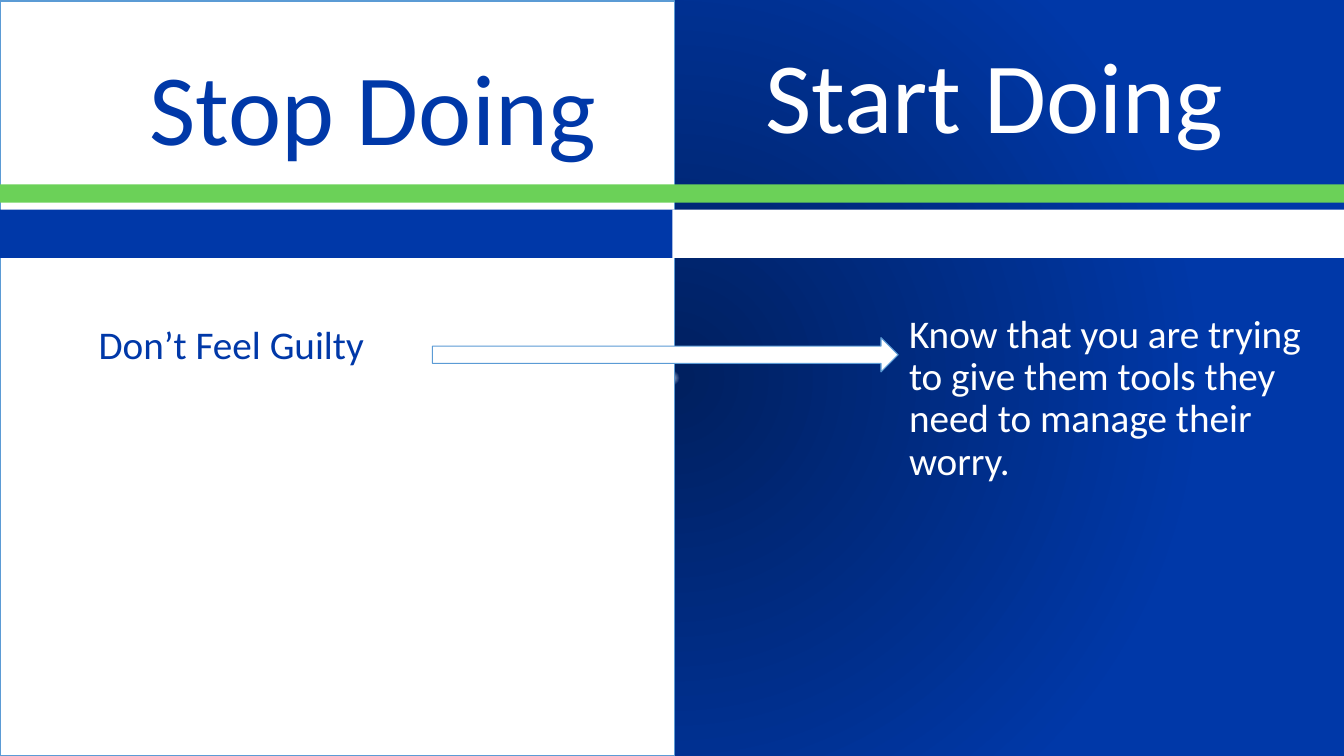
from lxml.etree import SubElement
from pptx import Presentation
from pptx.dml.color import RGBColor
from pptx.enum.shapes import MSO_SHAPE
from pptx.enum.text import PP_ALIGN
from pptx.oxml.ns import qn
from pptx.util import Pt

COLORS = {
    "white": "FFFFFF",
    "blue": "0038A8",
    "navy": "002060",
    "pale": "B3C6E7",
    "green": "6BD158",
    "outline": "5B9BD5",
}
WIDTH, HEIGHT = 960, 540


def color(name):
    """Return the named palette colour."""
    return RGBColor.from_string(COLORS[name])


def add_block(slide, box, fill, outline=None, kind=MSO_SHAPE.RECTANGLE):
    """Add a filled preset shape with an optional thin outline."""
    block = slide.shapes.add_shape(kind, *map(Pt, box))
    block.shadow.inherit = False
    block.fill.solid()
    block.fill.fore_color.rgb = color(fill)
    if outline:
        block.line.color.rgb = color(outline)
        block.line.width = Pt(0.75)
    else:
        block.line.fill.background()


def add_text(slide, text, box, *, size, ink, align=PP_ALIGN.LEFT, spacing=1.0):
    """Add a wrapped text box with one formatted paragraph."""
    frame = slide.shapes.add_textbox(*map(Pt, box)).text_frame
    frame.word_wrap = True
    paragraph = frame.paragraphs[0]
    paragraph.text = text
    paragraph.alignment = align
    paragraph.line_spacing = spacing
    paragraph.font.name = "Calibri"
    paragraph.font.size = Pt(size)
    paragraph.font.color.rgb = color(ink)


def paint_background(slide):
    """Fill the background with a circular gradient from the centre."""
    slide.background.fill.gradient()
    gradient = slide.element.find(".//" + qn("a:gradFill"))
    for child in list(gradient):
        gradient.remove(child)
    stops = SubElement(gradient, qn("a:gsLst"))
    for percent, name in ((0, "pale"), (1, "navy"), (70, "blue"), (100, "blue")):
        stop = SubElement(stops, qn("a:gs"), pos=str(percent * 1000))
        SubElement(stop, qn("a:srgbClr"), val=COLORS[name])
    circle = SubElement(gradient, qn("a:path"), path="circle")
    SubElement(circle, qn("a:fillToRect"), l="50000", t="50000", r="50000", b="50000")


def add_column(slide, box, heading, advice, ink, heading_at, advice_at, advice_width):
    """Place a band, a heading and a piece of advice relative to the column box."""
    left, top, width, _ = box
    add_block(slide, (left, top + 149.76, width, 34.56), ink)
    add_text(slide, heading, (left + heading_at[0], top + heading_at[1], 615.6, 94.32),
             size=72, ink=ink, align=PP_ALIGN.CENTER)
    add_text(slide, advice, (left + advice_at[0], top + advice_at[1], advice_width, 333.36),
             size=28, ink=ink, spacing=0.9)


def main():
    """Build and save the slide."""
    deck = Presentation()
    deck.slide_width, deck.slide_height = Pt(WIDTH), Pt(HEIGHT)
    slide = deck.slides.add_slide(deck.slide_layouts[6])
    stop_box = (0, 0.7, 481.7, 539.3)
    start_box = (480.25, 0, 479.75, HEIGHT)

    paint_background(slide)
    add_block(slide, stop_box, "white", outline="outline")
    add_block(slide, (0, 131.76, WIDTH, 12.96), "green")
    add_column(slide, (0, 0, 481.7, HEIGHT), "Stop Doing", "Don’t Feel Guilty", "blue",
               heading_at=(-41.76, 28.08), advice_at=(63.36, 228.96), advice_width=244.8)
    add_column(slide, start_box, "Start Doing",
               "Know that you are trying to give them tools they need to manage their worry.",
               "white", heading_at=(-77.75, 20.16), advice_at=(162, 221.04),
               advice_width=302.4)
    add_block(slide, (308.88, 241.2, 332.64, 24.48), "white", outline="outline",
              kind=MSO_SHAPE.RIGHT_ARROW)
    deck.save("out.pptx")


if __name__ == "__main__":
    main()
